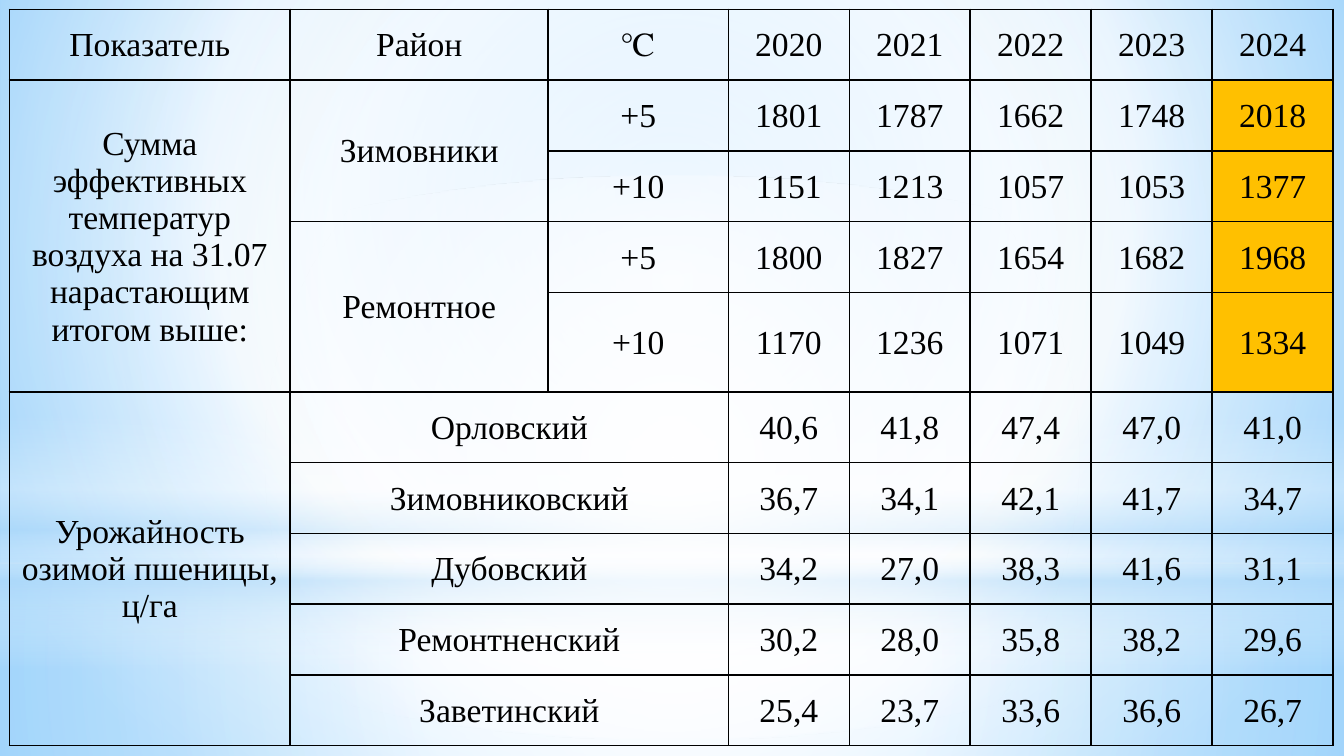
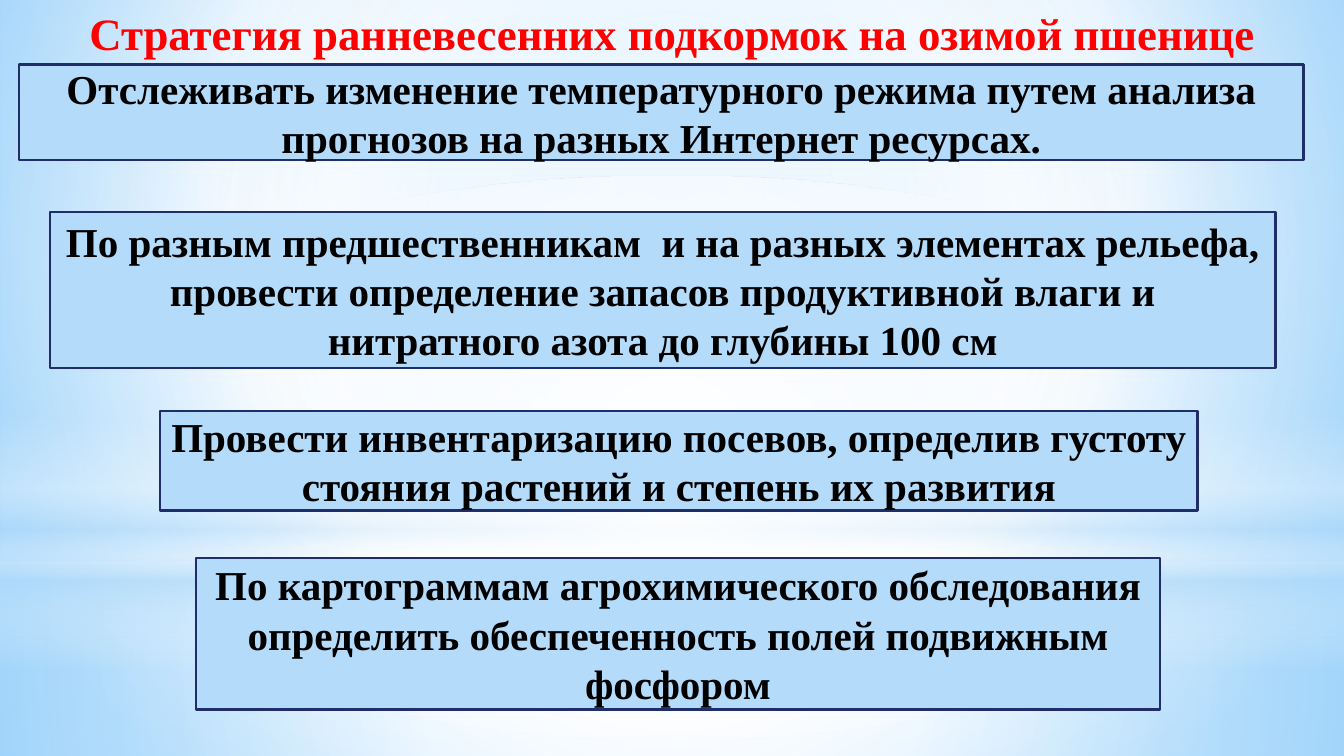
import pptx
import pptx.dml.color
import pptx.enum.shapes
import pptx.enum.text
import pptx.oxml.ns
import pptx.util
from lxml import etree

Inches = pptx.util.Inches
Pt = pptx.util.Pt
RGBColor = pptx.dml.color.RGBColor
MSO_SHAPE = pptx.enum.shapes.MSO_SHAPE
MIDDLE = pptx.enum.text.MSO_ANCHOR.MIDDLE
CENTER = pptx.enum.text.PP_ALIGN.CENTER
qn = pptx.oxml.ns.qn

FONT = "Times New Roman"
WIDTH = 10
HEIGHT = WIDTH * 9 / 16
BLACK = RGBColor(0x00, 0x00, 0x00)
WHITE = RGBColor(0xFF, 0xFF, 0xFF)
RED = RGBColor(0xFF, 0x00, 0x00)
AMBER = RGBColor(0xFF, 0xC0, 0x00)
NAVY = RGBColor(0x1F, 0x2E, 0x69)
PALE_BLUE = RGBColor(0xB4, 0xDC, 0xFA)
SKY = RGBColor(0x9E, 0xD5, 0xFF)
DEEP_SKY = RGBColor(0x5B, 0xB9, 0xFF)

CENTRED = (50, 50, 50, 50)
BACKGROUND_STOPS = [(0, SKY, 100), (60, WHITE, 100), (100, DEEP_SKY, 100)]
# Preset shape, box, gradient stops (position, colour, opacity), focus or None for vertical
BANDS = [
    (MSO_SHAPE.RECTANGLE, (0, 4.19, WIDTH, 1.44),
     [(0, WHITE, 91), (37, WHITE, 76), (100, PALE_BLUE, 79)], CENTRED),
    (MSO_SHAPE.RECTANGLE, (0, 0, WIDTH, 4.19),
     [(0, WHITE, 89), (48, WHITE, 62), (100, PALE_BLUE, 79)], CENTRED),
    (MSO_SHAPE.RECTANGLE, (0, 3.09, WIDTH, 1.88),
     [(0, WHITE, 0), (29, WHITE, 30), (45, PALE_BLUE, 40),
      (55, WHITE, 26), (65, PALE_BLUE, 60), (100, WHITE, 0)], None),
    (MSO_SHAPE.OVAL, (0, 1.31, WIDTH, 4.19),
     [(0, WHITE, 100), (56, WHITE, 0)], CENTRED),
]

COLUMN_WIDTHS = [2.09, 1.92, 1.34] + [0.9] * 5
TALL_ROW, TALL_HEIGHT = 4, 0.74
TABLE_ROWS = [
    ["Показатель", "Район", "℃", "2020", "2021", "2022", "2023", "2024"],
    ["Сумма эффективных температур воздуха на 31.07 нарастающим итогом выше:",
     "Зимовники", "+5", "1801", "1787", "1662", "1748", "2018"],
    ["", "", "+10", "1151", "1213", "1057", "1053", "1377"],
    ["", "Ремонтное", "+5", "1800", "1827", "1654", "1682", "1968"],
    ["", "", "+10", "1170", "1236", "1071", "1049", "1334"],
    ["Урожайность озимой пшеницы, ц/га",
     "Орловский", "", "40,6", "41,8", "47,4", "47,0", "41,0"],
    ["", "Зимовниковский", "", "36,7", "34,1", "42,1", "41,7", "34,7"],
    ["", "Дубовский", "", "34,2", "27,0", "38,3", "41,6", "31,1"],
    ["", "Ремонтненский", "", "30,2", "28,0", "35,8", "38,2", "29,6"],
    ["", "Заветинский", "", "25,4", "23,7", "33,6", "36,6", "26,7"],
]
# First and last cell of each merged block
MERGES = [((1, 0), (4, 0)), ((1, 1), (2, 1)), ((3, 1), (4, 1)), ((5, 0), (9, 0))]
MERGES += [((row, 1), (row, 2)) for row in range(5, 10)]
HIGHLIGHTED = {(row, 7) for row in range(1, 5)}

STEPS = [
    ((0.14, 0.48, 9.56, 0.71),
     "Отслеживать изменение температурного режима путем анализа "
     "прогнозов на разных Интернет ресурсах."),
    ((0.37, 1.58, 9.12, 1.16),
     "По разным предшественникам  и на разных элементах рельефа, провести "
     "определение запасов продуктивной влаги и нитратного азота до глубины 100 см"),
    ((1.19, 3.06, 7.72, 0.74),
     "Провести инвентаризацию посевов, определив густоту стояния растений "
     "и степень их развития"),
    ((1.46, 4.15, 7.17, 1.13),
     "По картограммам агрохимического обследования определить "
     "обеспеченность полей подвижным фосфором"),
]


def inches(box):
    return [Inches(length) for length in box]


def add_node(parent, tag, **attributes):
    node = etree.SubElement(parent, qn(tag))
    for name, value in attributes.items():
        node.set(name, str(value))
    return node


def set_gradient(fill, owner, stops, focus):
    """Fill with stops around a focus rectangle, or top to bottom without one."""
    fill.gradient()
    gradient = next(owner.iter(qn("a:gradFill")))
    gradient.clear()
    stop_list = add_node(gradient, "a:gsLst")
    for position, color, opacity in stops:
        stop = add_node(stop_list, "a:gs", pos=position * 1000)
        color_node = add_node(stop, "a:srgbClr", val=color)
        if opacity < 100:
            add_node(color_node, "a:alpha", val=opacity * 1000)
    if focus:
        circle = add_node(gradient, "a:path", path="circle")
        sides = {side: share * 1000 for side, share in zip("ltrb", focus)}
        add_node(circle, "a:fillToRect", **sides)
    else:
        add_node(gradient, "a:lin", ang=90 * 60000, scaled=0)


def write_text(text_frame, text, size, color=BLACK, bold=False):
    text_frame.word_wrap = True
    text_frame.text = text
    paragraph = text_frame.paragraphs[0]
    paragraph.alignment = CENTER
    for run in paragraph.runs:
        run.font.name = FONT
        run.font.size = Pt(size)
        run.font.bold = bold
        run.font.color.rgb = color


def set_margins(text_frame):
    text_frame.margin_left = text_frame.margin_right = Inches(0.07)
    text_frame.margin_top = text_frame.margin_bottom = Inches(0.04)


def build_master(master, slide):
    """Give the master its background and bands; slide only lends its shape builder."""
    set_gradient(master.background.fill, master.element, BACKGROUND_STOPS, (20, 10, 20, 60))
    for index, (preset, box, stops, focus) in enumerate(BANDS):
        band = slide.shapes.add_shape(preset, *inches(box))
        band.shadow.inherit = False
        band.line.fill.background()
        set_gradient(band.fill, band.element, stops, focus)
        master.shapes.element.insert(2 + index, band.element)


def draw_borders(cell):
    properties = cell._tc.get_or_add_tcPr()
    for side in ("a:lnL", "a:lnR", "a:lnT", "a:lnB"):
        line = add_node(properties, side, w=Pt(1))
        add_node(add_node(line, "a:solidFill"), "a:srgbClr", val=BLACK)


def build_table_slide(slide, box):
    table = slide.shapes.add_table(
        len(TABLE_ROWS), len(COLUMN_WIDTHS), *inches(box)).table
    table.first_row = table.horz_banding = False
    for column, width in zip(table.columns, COLUMN_WIDTHS):
        column.width = Inches(width)
    row_height = (box[3] - TALL_HEIGHT) / (len(TABLE_ROWS) - 1)
    for index, row in enumerate(table.rows):
        row.height = Inches(TALL_HEIGHT if index == TALL_ROW else row_height)
    for row_index, texts in enumerate(TABLE_ROWS):
        for column_index, text in enumerate(texts):
            cell = table.cell(row_index, column_index)
            cell.margin_left = cell.margin_right = cell.margin_top = Inches(0.01)
            cell.margin_bottom = 0
            cell.vertical_anchor = MIDDLE
            draw_borders(cell)
            if (row_index, column_index) in HIGHLIGHTED:
                cell.fill.solid()
                cell.fill.fore_color.rgb = AMBER
            else:
                cell.fill.background()
            write_text(cell.text_frame, text, 18)
    for first, last in MERGES:
        table.cell(*first).merge(table.cell(*last))


def add_title(slide, box, text):
    text_frame = slide.shapes.add_textbox(*inches(box)).text_frame
    set_margins(text_frame)
    write_text(text_frame, text, 24, RED, bold=True)
    text_frame.auto_size = pptx.enum.text.MSO_AUTO_SIZE.SHAPE_TO_FIT_TEXT


def add_step(slide, box, text):
    shape = slide.shapes.add_shape(MSO_SHAPE.RECTANGLE, *inches(box))
    shape.shadow.inherit = False
    shape.fill.solid()
    shape.fill.fore_color.rgb = PALE_BLUE
    shape.line.color.rgb = NAVY
    shape.line.width = Pt(1.25)
    set_margins(shape.text_frame)
    shape.text_frame.vertical_anchor = MIDDLE
    write_text(shape.text_frame, text, 22, bold=True)


def build_strategy_slide(slide):
    add_title(slide, (0, 0, WIDTH, 0.48),
              "Стратегия ранневесенних подкормок на озимой пшенице")
    for box, text in STEPS:
        add_step(slide, box, text)


def main():
    presentation = pptx.Presentation()
    presentation.slide_width, presentation.slide_height = inches((WIDTH, HEIGHT))
    blank = presentation.slide_layouts[6]
    table_slide = presentation.slides.add_slide(blank)
    build_master(presentation.slide_master, table_slide)
    build_table_slide(table_slide, (0.07, 0.07, 9.85, 5.48))
    build_strategy_slide(presentation.slides.add_slide(blank))
    presentation.save("out.pptx")


if __name__ == "__main__":
    main()
